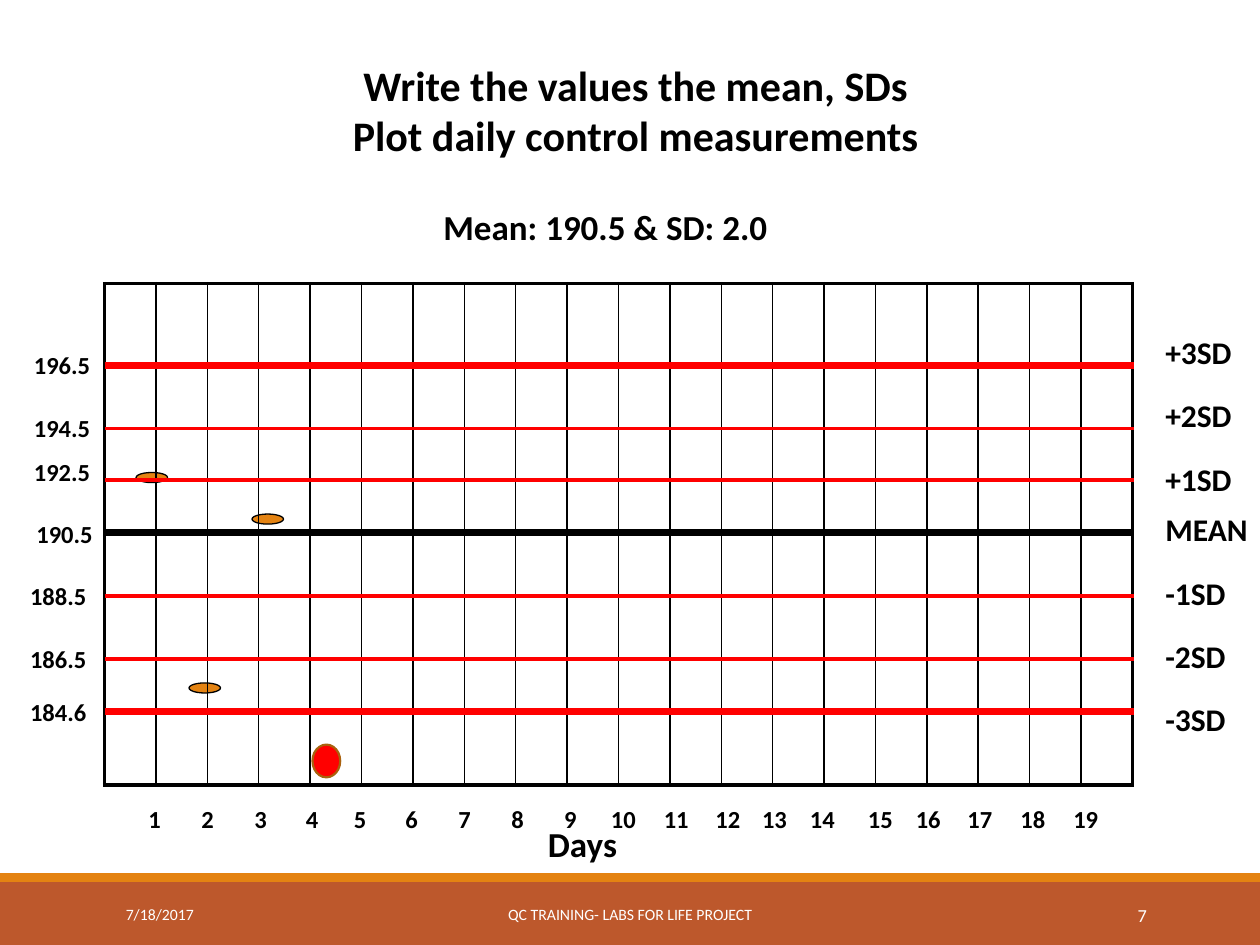
import pptx
import pptx.util
import pptx.dml.color
import pptx.enum.shapes
import pptx.enum.text
import pptx.oxml
import lxml.etree

Inches = pptx.util.Inches
Pt = pptx.util.Pt
Shape = pptx.enum.shapes.MSO_SHAPE
Align = pptx.enum.text.PP_ALIGN
Anchor = pptx.enum.text.MSO_ANCHOR


def color(value):
    return pptx.dml.color.RGBColor.from_string(value)


def add_text(lines, left, top, width, height, size, align=Align.LEFT, wrap=True, footer=False):
    box = page.shapes.add_textbox(Inches(left), Inches(top), Inches(width), Inches(height))
    frame = box.text_frame
    frame.word_wrap = wrap
    frame.vertical_anchor = Anchor.MIDDLE if footer else Anchor.TOP
    frame.text = lines
    for para in frame.paragraphs:
        para.alignment = align
        para.font.name = "Calibri"
        para.font.size = Pt(size)
        para.font.bold = not footer
        para.font.color.rgb = color("FFFFFF" if footer else "000000")


deck = pptx.Presentation()
deck.slide_width = Inches(10)
deck.slide_height = Inches(7.5)
page = deck.slides.add_slide(deck.slide_layouts[6])

for kind, left, top, width, height, fill, outline, weight in [
    (Shape.RECTANGLE, 0, 7, 10, 0.5, "BD582C", None, 0),
    (Shape.RECTANGLE, 0, 6.93, 10, 0.07, "E48312", None, 0),
    (Shape.OVAL, 1.08, 3.75, 0.25, 0.08, "E48312", "000000", 0.75),
    (Shape.OVAL, 1.5, 5.42, 0.25, 0.08, "E48312", "000000", 0.75),
    (Shape.OVAL, 2, 4.08, 0.25, 0.08, "E48312", "000000", 0.75),
    (Shape.OVAL, 2.48, 5.91, 0.22, 0.26, "FF0000", "A9610D", 1.25),
]:
    shape = page.shapes.add_shape(kind, Inches(left), Inches(top), Inches(width), Inches(height))
    shape.shadow.inherit = False
    shape.fill.solid()
    shape.fill.fore_color.rgb = color(fill)
    if outline:
        shape.line.color.rgb = color(outline)
        shape.line.width = Pt(weight)
    else:
        shape.line.fill.background()

row_count, column_count = 4, 20
table = page.shapes.add_table(
    row_count, column_count, Inches(0.83), Inches(2.25), Inches(8.16), Inches(3.98)
).table
table.first_row = False
table.horz_banding = False
for column in table.columns:
    column.width = Inches(8.16 / column_count)
for row, height in zip(table.rows, [0.99, 1.01, 0.99, 0.99]):
    row.height = Inches(height)
for row in range(row_count):
    for column in range(column_count):
        cell = table.cell(row, column)
        properties = cell._tc.get_or_add_tcPr()
        borders = {
            "lnL": 2.25 if column == 0 else 1,
            "lnR": 2.25 if column == column_count - 1 else 1,
            "lnT": [2.25, 0, 1, 1][row],
            "lnB": [0, 1, 1, 2.25][row],
        }
        for side, weight in borders.items():
            border = lxml.etree.SubElement(properties, pptx.oxml.ns.qn("a:" + side), w=str(Pt(weight)))
            if weight:
                paint = lxml.etree.SubElement(border, pptx.oxml.ns.qn("a:solidFill"))
                lxml.etree.SubElement(paint, pptx.oxml.ns.qn("a:srgbClr"), val="000000")
            else:
                lxml.etree.SubElement(border, pptx.oxml.ns.qn("a:noFill"))
        cell.fill.background()

for height, weight, stroke in [
    (2.9, 4, "FF0000"),
    (3.4, 2, "FF0000"),
    (3.81, 2, "FF0000"),
    (4.23, 4, "000000"),
    (4.73, 2, "FF0000"),
    (5.23, 2, "FF0000"),
    (5.65, 4, "FF0000"),
]:
    line = page.shapes.add_connector(
        pptx.enum.shapes.MSO_CONNECTOR.STRAIGHT,
        Inches(0.83), Inches(height), Inches(9), Inches(height),
    )
    line.line.color.rgb = color(stroke)
    line.line.width = Pt(weight)
    lxml.etree.SubElement(line._element.spPr, pptx.oxml.ns.qn("a:effectLst"))

for label, top in [
    ("+3SD", 2.59), ("+2SD", 3.09), ("+1SD", 3.6), ("MEAN", 4),
    ("-1SD", 4.51), ("-2SD", 5.01), ("-3SD", 5.51),
]:
    add_text(label, 9.15, top, 0.86 if label == "MEAN" else 0.73, 0.4, 18, wrap=False)

for label, left, top in [
    ("196.5", 0.17, 2.73), ("194.5", 0.17, 3.23), ("192.5", 0.17, 3.58), ("190.5", 0.19, 4.07),
    ("188.5", 0.14, 4.56), ("186.5", 0.14, 5.06), ("184.6", 0.14, 5.48),
]:
    add_text(label, left, top, 0.65, 0.34, 14, wrap=False)

day_lefts = [
    1.08, 1.5, 1.92, 2.33, 2.71, 3.12, 3.54, 3.96, 4.38, 4.75,
    5.17, 5.58, 5.95, 6.33, 6.79, 7.17, 7.58, 8, 8.42,
]
for day, left in enumerate(day_lefts, 1):
    add_text(str(day), left, 6.33, 0.3 if day < 10 else 0.4, 0.34, 14, wrap=False)

add_text("Days", 4.25, 6.48, 0.76, 0.44, 20, wrap=False)
add_text("Write the values the mean, SDs\nPlot daily control measurements",
         0.42, 0.42, 9.25, 0.91, 24, Align.CENTER)
add_text("Mean: 190.5 & SD: 2.0", 3.42, 1.58, 2.92, 0.44, 20)
add_text("7/18/2017", 0.9, 7.06, 2.03, 0.4, 9, footer=True)
add_text("QC TRAINING- LABS FOR LIFE PROJECT", 3.02, 7.06, 3.96, 0.4, 9, Align.CENTER, footer=True)
add_text("7", 8.12, 7.06, 1.08, 0.4, 10.5, Align.RIGHT, footer=True)

deck.save("out.pptx")
